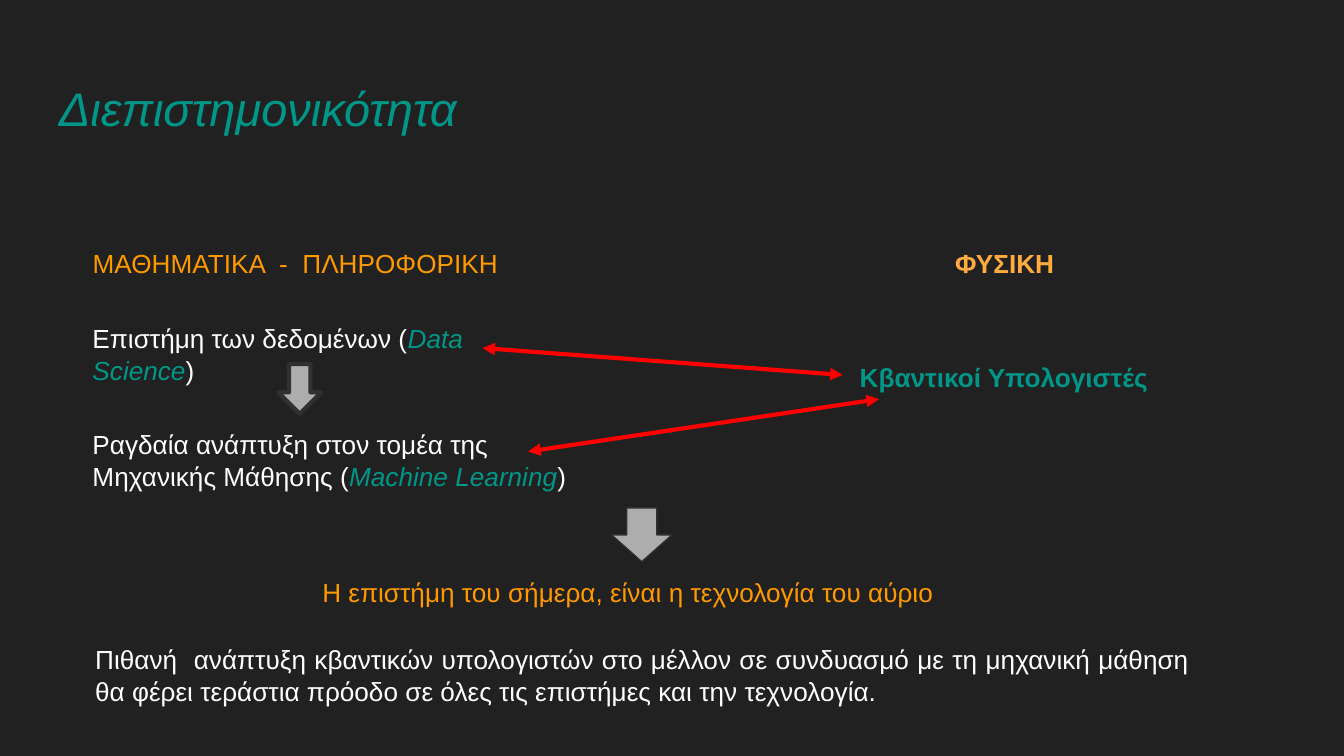
"""Build a slide on how data science and physics lead to future technology."""
import pptx
import pptx.util
import pptx.dml.color
import pptx.enum.shapes
import pptx.enum.text
import pptx.oxml.ns
from lxml import etree

Inches, Pt = pptx.util.Inches, pptx.util.Pt
RGBColor = pptx.dml.color.RGBColor
ALIGN = pptx.enum.text.PP_ALIGN
SHAPE = pptx.enum.shapes.MSO_SHAPE

DARK = RGBColor(0x21, 0x21, 0x21)
TEAL = RGBColor(0x00, 0x96, 0x88)
ORANGE = RGBColor(0xFF, 0x99, 0x00)
AMBER = RGBColor(0xFF, 0xAB, 0x40)
WHITE = RGBColor(0xFF, 0xFF, 0xFF)
GREY = RGBColor(0xAD, 0xAD, 0xAD)
OUTLINE = RGBColor(0x30, 0x30, 0x30)
RED = RGBColor(0xFF, 0x00, 0x00)

TITLE = ("Διεπιστημονικότητα", (0.34, 0.49, 9.32, 0.63))
LABELS = [
    ("ΜΑΘΗΜΑΤΙΚΑ  -  ΠΛΗΡΟΦΟΡΙΚΗ", (0.59, 1.74, 3.79, 0.44), ORANGE, ALIGN.LEFT, False),
    ("ΦΥΣΙΚΗ", (6.04, 1.74, 2.87, 0.44), AMBER, ALIGN.CENTER, True),
    ("Κβαντικοί Υπολογιστές", (5.83, 2.59, 3.28, 0.44), TEAL, ALIGN.CENTER, True),
    ("Η επιστήμη του σήμερα, είναι η τεχνολογία του αύριο",
     (2.3, 4.19, 4.95, 0.44), ORANGE, ALIGN.LEFT, False),
    ("Πιθανή  ανάπτυξη κβαντικών υπολογιστών στο μέλλον σε συνδυασμό με τη μηχανική μάθηση "
     "θα φέρει τεράστια πρόοδο σε όλες τις επιστήμες και την τεχνολογία.",
     (0.61, 4.69, 8.34, 0.67), WHITE, ALIGN.JUSTIFY, False),
]
FIELDS = [
    ("Επιστήμη των δεδομένων (", "Data Science", (0.59, 2.3, 3.54, 0.67)),
    ("Ραγδαία ανάπτυξη στον τομέα της Μηχανικής Μάθησης (", "Machine Learning",
     (0.59, 3.09, 4.06, 0.67)),
]
DOWN_ARROWS = [((2.07, 2.71, 0.32, 0.37), 2.25), ((4.55, 3.78, 0.45, 0.4), 0.75)]
LINKS = [((3.59, 2.59), (6.27, 2.79)), ((3.93, 3.36), (6.54, 2.97))]


def add_text(s, runs, box, size=14, align=ALIGN.LEFT, bold=False):
    tf = s.shapes.add_textbox(*map(Inches, box)).text_frame
    tf.word_wrap = True
    tf.margin_left = tf.margin_right = tf.margin_top = tf.margin_bottom = Inches(0.1)
    p = tf.paragraphs[0]
    p.alignment = align
    p.font.name, p.font.size, p.font.bold = "Arial", Pt(size), bold
    for text, color, italic in runs:
        r = p.add_run()
        r.text = text
        r.font.color.rgb, r.font.italic = color, italic


def add_down_arrow(s, box, width):
    sp = s.shapes.add_shape(SHAPE.DOWN_ARROW, *map(Inches, box))
    sp.shadow.inherit = False
    sp.fill.solid()
    sp.fill.fore_color.rgb = GREY
    sp.line.color.rgb, sp.line.width = OUTLINE, Pt(width)


def add_link(s, start, end):
    straight = pptx.enum.shapes.MSO_CONNECTOR.STRAIGHT
    link = s.shapes.add_connector(straight, *map(Inches, start + end))
    link.line.color.rgb, link.line.width = RED, Pt(2.25)
    qn = pptx.oxml.ns.qn
    ln = link.line._get_or_add_ln()
    for tag in ("a:headEnd", "a:tailEnd"):
        etree.SubElement(ln, qn(tag), type="triangle")
    etree.SubElement(link._element.spPr, qn("a:effectLst"))


def main():
    prs = pptx.Presentation()
    prs.slide_width = Inches(10)
    prs.slide_height = prs.slide_width * 9 // 16
    s = prs.slides.add_slide(prs.slide_layouts[6])
    s.background.fill.solid()
    s.background.fill.fore_color.rgb = DARK

    title, box = TITLE
    add_text(s, [(title, TEAL, True)], box, size=25.2)
    for text, box, color, align, bold in LABELS:
        add_text(s, [(text, color, False)], box, align=align, bold=bold)
    for greek, english, box in FIELDS:
        add_text(s, [(greek, WHITE, False), (english, TEAL, True), (")", WHITE, False)], box)
    for box, width in DOWN_ARROWS:
        add_down_arrow(s, box, width)
    for start, end in LINKS:
        add_link(s, start, end)
    prs.save("out.pptx")


if __name__ == "__main__":
    main()
